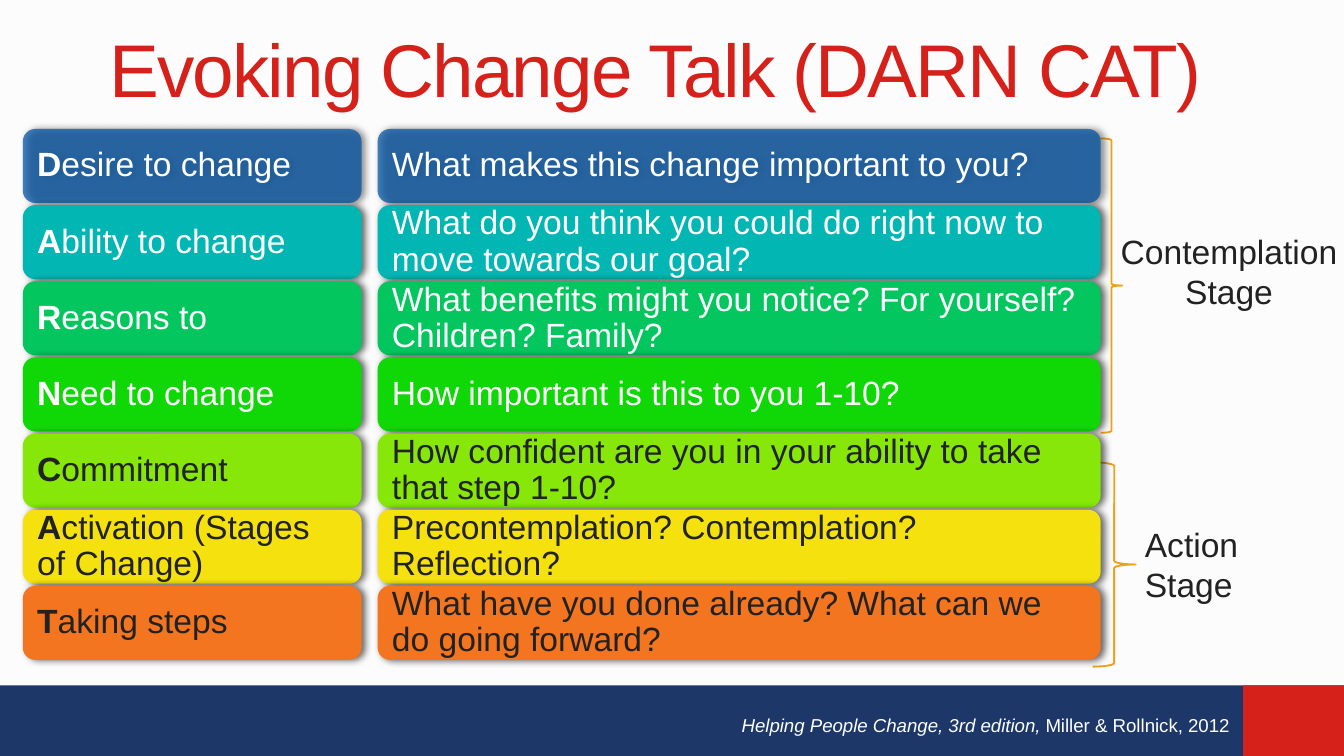
from lxml import etree
from pptx import Presentation
from pptx.dml.color import RGBColor
from pptx.enum import shapes, text
from pptx.oxml import ns
from pptx.util import Inches, Pt

COLORS = {
    "background": "FCFCFC", "navy": "1C3768", "red": "D6201A",
    "white": "FFFFFF", "dark": "222222", "brace": "F1A019", "shadow": "000000",
    "blue": "0054A6", "teal": "02B7B3", "green": "03C75E", "bright": "10D706",
    "lime": "86E708", "yellow": "F4E10D", "orange": "F37520",
}
ROWS = [
    ("Desire to change", "What makes this change important to you?", "blue", "white"),
    ("Ability to change", "What do you think you could do right now to move towards our goal?", "teal", "white"),
    ("Reasons to", "What benefits might you notice? For yourself? Children? Family?", "green", "white"),
    ("Need to change", "How important is this to you 1-10?", "bright", "white"),
    ("Commitment", "How confident are you in your ability to take that step 1-10?", "lime", "dark"),
    ("Activation (Stages of Change)", "Precontemplation? Contemplation? Reflection?", "yellow", "dark"),
    ("Taking steps", "What have you done already? What can we do going forward?", "orange", "dark"),
]
FIRST_TOP, LAST_TOP, ROW_HEIGHT = 0.96, 4.36, 0.55
ROW_STEP = (LAST_TOP - FIRST_TOP) / (len(ROWS) - 1)
BLUE_OPACITY = 72


def color(name):
    return RGBColor.from_string(COLORS[name])


def add_shape(page, kind, area, fill=None):
    shape = page.shapes.add_shape(kind, *map(Inches, area))
    shape.shadow.inherit = False
    if fill:
        shape.fill.solid()
        shape.fill.fore_color.rgb = color(fill)
        shape.line.fill.background()
    else:
        shape.fill.background()
    return shape


def add_alpha(color_element, percent):
    etree.SubElement(color_element, ns.qn("a:alpha"), val=str(percent * 1000))


def add_shadow(shape):
    effects = shape._element.spPr.find(ns.qn("a:effectLst"))
    shadow = etree.SubElement(effects, ns.qn("a:outerShdw"), blurRad=str(Pt(4)),
                              dist=str(Pt(2)), dir="0", rotWithShape="0")
    tint = etree.SubElement(shadow, ns.qn("a:srgbClr"), val=COLORS["shadow"])
    add_alpha(tint, 60)


def write(frame, pieces, size, ink, align=text.PP_ALIGN.LEFT):
    frame.word_wrap = True
    para = frame.paragraphs[0]
    para.alignment = align
    para.font.name = "Arial"
    para.font.size = Pt(size)
    para.font.color.rgb = color(ink)
    for words, style in pieces:
        span = para.add_run()
        span.text = words
        span.font.bold = style == "bold"
        span.font.italic = style == "italic"
    return para


def add_text(page, area, pieces, size, ink, align=text.PP_ALIGN.LEFT):
    box = page.shapes.add_textbox(*map(Inches, area))
    write(box.text_frame, pieces, size, ink, align)
    return box


def add_title(page, words):
    box = add_text(page, (0.25, 0.09, 9.25, 0.82), [(words, None)], 40, "red",
                   text.PP_ALIGN.CENTER)
    box.text_frame.vertical_anchor = text.MSO_ANCHOR.MIDDLE
    for span in box.text_frame.paragraphs[0].runs:
        span._r.get_or_add_rPr().set("spc", "-100")


def add_card(page, area, pieces, fill, ink):
    card = add_shape(page, shapes.MSO_SHAPE.ROUNDED_RECTANGLE, area, fill)
    add_shadow(card)
    if fill == "blue":
        add_alpha(card._element.spPr.find(".//" + ns.qn("a:srgbClr")), BLUE_OPACITY)
    frame = card.text_frame
    frame.vertical_anchor = text.MSO_ANCHOR.MIDDLE
    frame.margin_left = frame.margin_right = Inches(0.08)
    frame.margin_top = frame.margin_bottom = Inches(0.07)
    write(frame, pieces, 18, ink).line_spacing = 0.9


def add_brace(page, area):
    brace = add_shape(page, shapes.MSO_SHAPE.RIGHT_BRACE, area)
    brace.line.color.rgb = color("brace")
    brace.line.width = Pt(1)


def main():
    deck = Presentation()
    deck.slide_width = Inches(10)
    deck.slide_height = deck.slide_width * 9 // 16
    page = deck.slides.add_slide(deck.slide_layouts[6])
    page.background.fill.solid()
    page.background.fill.fore_color.rgb = color("background")

    add_shape(page, shapes.MSO_SHAPE.RECTANGLE, (0, 5.1, 10, 0.53), "navy")
    add_shape(page, shapes.MSO_SHAPE.RECTANGLE, (9.25, 5.1, 0.75, 0.53), "red")
    add_title(page, "Evoking Change Talk (DARN CAT)")
    add_brace(page, (8.19, 1.03, 0.16, 2.19))
    add_brace(page, (8.13, 3.44, 0.32, 1.52))
    add_text(page, (8.13, 1.67, 2.03, 0.71), [("Contemplation Stage", None)], 18,
             "dark", text.PP_ALIGN.CENTER)
    add_text(page, (8.42, 3.85, 1.07, 0.71), [("Action Stage", None)], 18, "dark")

    for index, (label, question, fill, ink) in enumerate(ROWS):
        top = FIRST_TOP + index * ROW_STEP
        add_card(page, (0.17, top, 2.52, ROW_HEIGHT),
                 [(label[0], "bold"), (label[1:], None)], fill, ink)
        add_card(page, (2.81, top, 5.38, ROW_HEIGHT), [(question, None)], fill, ink)

    add_text(page, (5.42, 5.26, 3.86, 0.27),
             [("Helping People Change, 3rd edition, ", "italic"),
              ("Miller & Rollnick, 2012", None)], 10, "white")
    deck.save("out.pptx")


if __name__ == "__main__":
    main()
